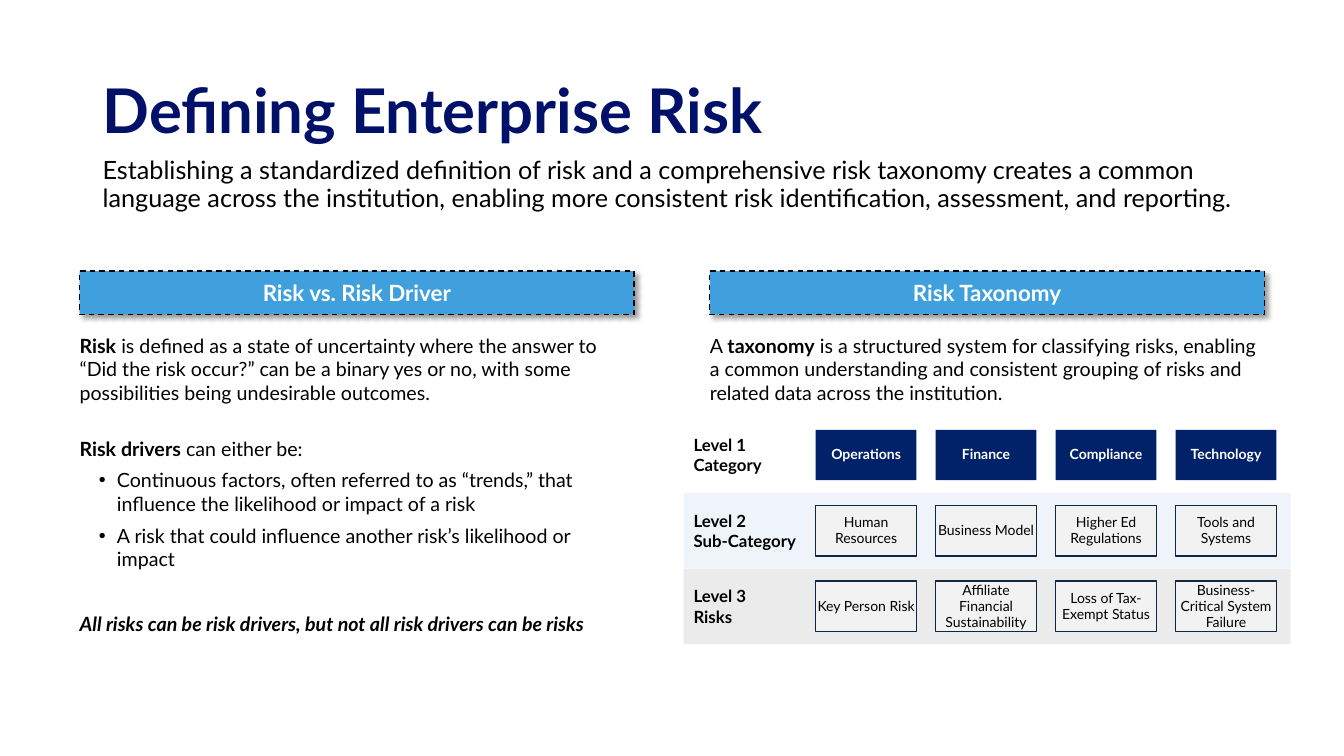
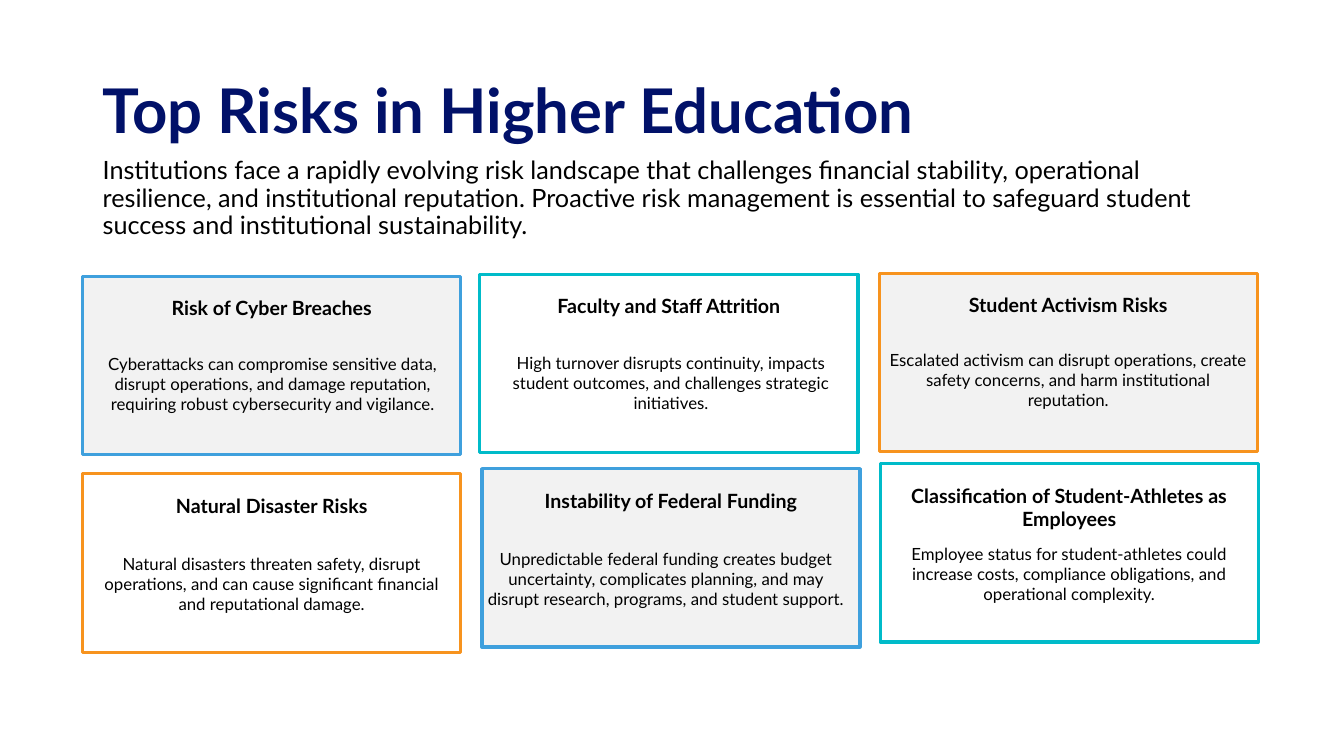
from pptx import Presentation
from pptx.util import Inches, Pt
from pptx.dml.color import RGBColor
from pptx.enum.dml import MSO_LINE
from pptx.enum.shapes import MSO_SHAPE as SHAPE
from pptx.enum.text import MSO_ANCHOR as ANCHOR, PP_ALIGN as ALIGN
from pptx.oxml.ns import qn
from lxml.etree import SubElement

FONT = "Lato"
BLACK, WHITE, GRAY = "000000", "FFFFFF", "F2F2F2"
TITLE, NAVY, INK = "011169", "012169", "0E2841"
BLUE, TEAL, ORANGE = "3FA0DD", "00BBC9", "F7931E"

HEADERS = [
    ("Defining Enterprise Risk",
     "Establishing a standardized definition of risk and a comprehensive risk taxonomy creates a common "
     "language across the institution, enabling more consistent risk identification, assessment, and reporting."),
    ("Top Risks in Higher Education",
     "Institutions face a rapidly evolving risk landscape that challenges financial stability, operational "
     "resilience, and institutional reputation. Proactive risk management is essential to safeguard student "
     "success and institutional sustainability."),
]

COLUMNS = [
    (0.79, 2.78, "Risk vs. Risk Driver", [
        dict(runs=[("Risk", "b"), (" is defined as a state of uncertainty where the answer to “Did the risk "
                                   "occur?” can be a binary yes or no, with some possibilities being "
                                   "undesirable outcomes.", "")]),
        dict(runs=[("Risk drivers", "b"), (" can either be:", "")], before=23),
        dict(runs=[("Continuous factors, often referred to as “trends,” that influence the likelihood "
                    "or impact of a risk", "")], before=6, bullet=True),
        dict(runs=[("A risk that could influence another risk’s likelihood or impact", "")],
             before=6, bullet=True),
        dict(runs=[("All risks can be risk drivers, but not all risk drivers can be risks", "bi")], before=29),
    ]),
    (7.04, 0.71, "Risk Taxonomy", [
        dict(runs=[("A ", ""), ("taxonomy", "b"),
                   (" is a structured system for classifying risks, enabling a common understanding and "
                    "consistent grouping of risks and related data across the institution.", "")]),
    ]),
]

LEVELS = [
    ("Level 1", "Category", WHITE, 49, ["Operations", "Finance", "Compliance", "Technology"]),
    ("Level 2", "Sub-Category", "DEEBF7", 51,
     ["Human Resources", "Business Model", "Higher Ed Regulations", "Tools and Systems"]),
    ("Level 3", "Risks", "D9D9D9", 51,
     ["Key Person Risk", "Affiliate Financial Sustainability", "Loss of Tax-Exempt Status",
      "Business-Critical System Failure"]),
]

CARDS = [
    ((0.82, 2.74), (0.83, 3.41), GRAY, BLUE, "Risk of Cyber Breaches",
     "Cyberattacks can compromise sensitive data, disrupt operations, and damage reputation, "
     "requiring robust cybersecurity and vigilance."),
    ((4.76, 2.72), (4.78, 3.4), None, TEAL, "Faculty and Staff Attrition",
     "High turnover disrupts continuity, impacts student outcomes, and challenges strategic initiatives."),
    ((8.72, 2.71), (8.72, 3.37), GRAY, ORANGE, "Student Activism Risks",
     "Escalated activism can disrupt operations, create safety concerns, and harm institutional reputation."),
    ((0.82, 4.7), (0.82, 5.39), WHITE, ORANGE, "Natural Disaster Risks",
     "Natural disasters threaten safety, disrupt operations, and can cause significant financial "
     "and reputational damage."),
    ((4.78, 4.65), (4.73, 5.34), GRAY, BLUE, "Instability of Federal Funding",
     "Unpredictable federal funding creates budget uncertainty, complicates planning, and may disrupt "
     "research, programs, and student support."),
    ((8.73, 4.6), (8.73, 5.29), WHITE, TEAL, "Classification of Student-Athletes as Employees",
     "Employee status for student-athletes could increase costs, compliance obligations, "
     "and operational complexity."),
]


def color(value):
    return RGBColor.from_string(value)


def plain(*lines, style=""):
    return [dict(runs=[(line, style)]) for line in lines]


def add_bullet(p):
    pPr = p._p.get_or_add_pPr()
    pPr.set("marL", str(Inches(0.37)))
    pPr.set("indent", str(Inches(-0.18)))
    SubElement(pPr, qn("a:buFont")).set("typeface", "Arial")
    SubElement(pPr, qn("a:buChar")).set("char", "•")


def write(sp, paras, size, ink=BLACK, align=ALIGN.LEFT, anchor=ANCHOR.TOP,
          insets=(0.1, 0.05, 0.1, 0.05), spacing=1.0):
    tf = sp.text_frame
    tf.word_wrap = True
    tf.vertical_anchor = anchor
    tf.margin_left, tf.margin_top, tf.margin_right, tf.margin_bottom = map(Inches, insets)
    for i, para in enumerate(paras):
        p = tf.add_paragraph() if i else tf.paragraphs[0]
        p.alignment = align
        p.line_spacing = spacing
        p.space_before = Pt(para.get("before", 0))
        if para.get("bullet"):
            add_bullet(p)
        for text, style in para["runs"]:
            r = p.add_run()
            r.text = text
            r.font.name = FONT
            r.font.size = Pt(size)
            r.font.color.rgb = color(ink)
            r.font.bold = "b" in style
            r.font.italic = "i" in style


def add_text(s, box, paras, size, **options):
    write(s.shapes.add_textbox(*map(Inches, box)), paras, size, **options)


def add_rect(s, box, fill=None, line=None, width=1.0):
    sp = s.shapes.add_shape(SHAPE.RECTANGLE, *map(Inches, box))
    sp.shadow.inherit = False
    if fill:
        sp.fill.solid()
        sp.fill.fore_color.rgb = color(fill)
    else:
        sp.fill.background()
    if line:
        sp.line.color.rgb = color(line)
        sp.line.width = Pt(width)
    else:
        sp.line.fill.background()
    return sp


def set_alpha(sp, percent):
    rgb = sp._element.spPr.find(qn("a:solidFill")).find(qn("a:srgbClr"))
    SubElement(rgb, qn("a:alpha")).set("val", str(percent * 1000))


def add_shadow(sp):
    effects = sp._element.spPr.find(qn("a:effectLst"))
    shadow = SubElement(effects, qn("a:outerShdw"), blurRad=str(Pt(4)), dist=str(Pt(3)),
                        dir=str(45 * 60000), algn="tl", rotWithShape="0")
    rgb = SubElement(shadow, qn("a:srgbClr"), val=BLACK)
    SubElement(rgb, qn("a:alpha")).set("val", "40000")


def new_slide(prs, title, subtitle):
    s = prs.slides.add_slide(prs.slide_layouts[6])
    add_text(s, (0.92, 0.4, 11.5, 1.45), plain(title, style="b"), 44,
             ink=TITLE, anchor=ANCHOR.MIDDLE, spacing=0.9)
    add_text(s, (0.92, 1.52, 11.5, 2.18), plain(subtitle), 18, spacing=0.9)
    return s


def add_column(s, left, height, heading, paras):
    sp = add_rect(s, (left, 2.69, 5.5, 0.43), BLUE, BLACK)
    sp.line.dash_style = MSO_LINE.DASH
    add_shadow(sp)
    write(sp, plain(heading, style="b"), 16, ink=WHITE, align=ALIGN.CENTER,
          anchor=ANCHOR.MIDDLE, insets=(0.03,) * 4)
    add_text(s, (left, 3.31, 5.5, height), paras, 14, insets=(0,) * 4)


def add_taxonomy(s):
    band_height, box_height = 0.75, 0.5
    for row, (level, kind, fill, alpha, names) in enumerate(LEVELS):
        top = 4.14 + row * band_height
        band = add_rect(s, (6.78, top, 6.02, band_height), fill)
        set_alpha(band, alpha)
        write(band, plain(level, kind, style="b"), 12, anchor=ANCHOR.MIDDLE)
        box_fill, line, ink, style, side = (GRAY, INK, BLACK, "", 0.01) if row else (NAVY, None, WHITE, "b", 0.05)
        for col, name in enumerate(names):
            box = (8.09 + col * 1.19, top + (band_height - box_height) / 2, 1, box_height)
            sp = add_rect(s, box, box_fill, line)
            write(sp, plain(name, style=style), 10, ink=ink, align=ALIGN.CENTER,
                  anchor=ANCHOR.MIDDLE, insets=(side, 0.05, side, 0.05), spacing=0.95)


def add_card(s, card_at, body_at, fill, line, heading, body):
    sp = add_rect(s, (*card_at, 3.75, 1.77), fill, line, 2.25)
    write(sp, plain(heading, style="b"), 14, align=ALIGN.CENTER, insets=(0.04, 0.2, 0.04, 0.2))
    add_text(s, (*body_at, 3.75, 1.08), plain(body), 12, align=ALIGN.CENTER, insets=(0.1, 0.1, 0.1, 0.2))


def main():
    prs = Presentation()
    prs.slide_width, prs.slide_height = Inches(13.33), Inches(7.5)
    definition, top_risks = [new_slide(prs, *header) for header in HEADERS]
    for column in COLUMNS:
        add_column(definition, *column)
    add_taxonomy(definition)
    for card in CARDS:
        add_card(top_risks, *card)
    prs.save("out.pptx")


if __name__ == "__main__":
    main()
